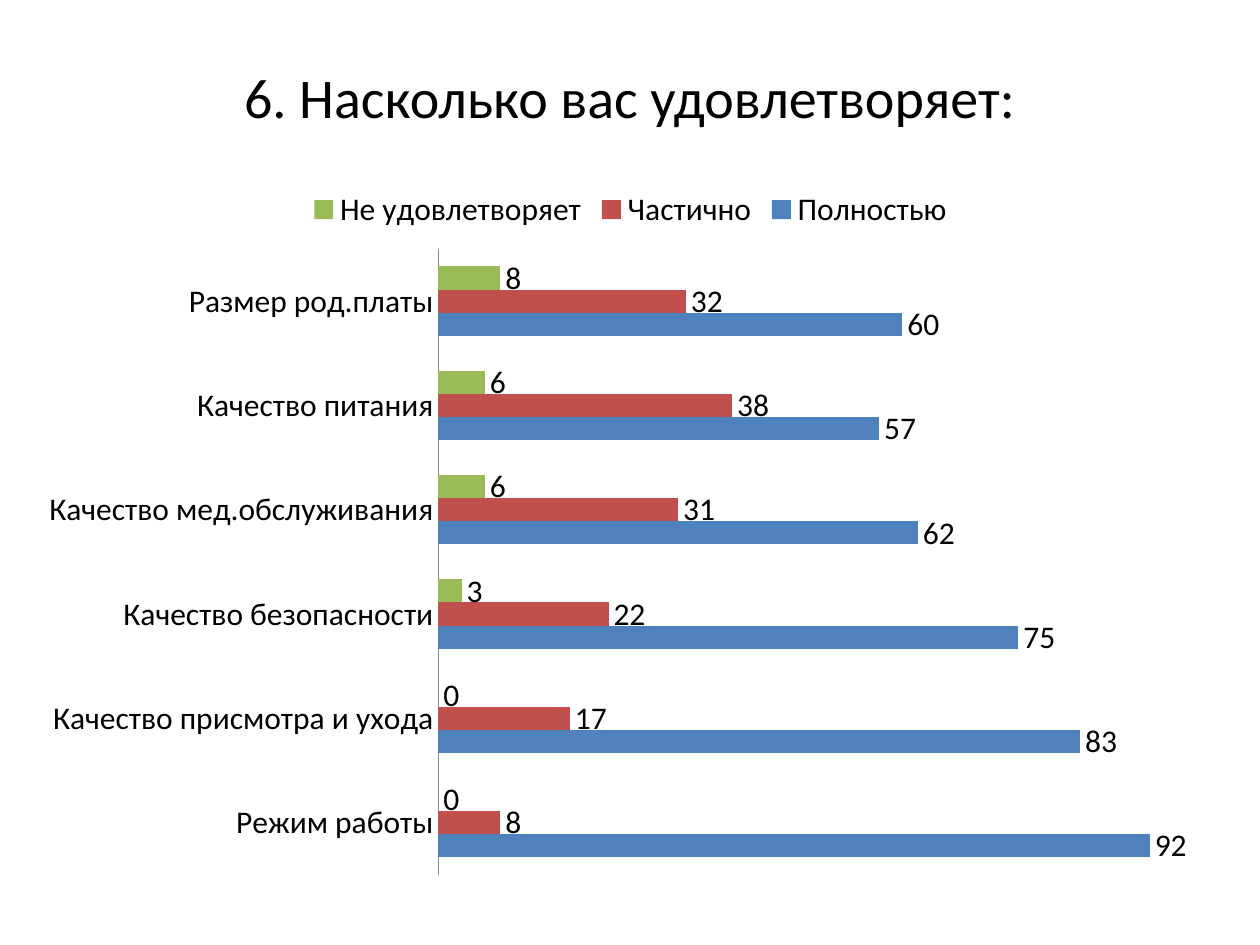
from pptx import Presentation
from pptx.chart.data import CategoryChartData
from pptx.dml.color import RGBColor
from pptx.enum.chart import XL_CHART_TYPE, XL_LABEL_POSITION, XL_LEGEND_POSITION, XL_TICK_MARK
from pptx.enum.text import MSO_ANCHOR, PP_ALIGN
from pptx.util import Inches, Pt

BLACK = RGBColor(0x00, 0x00, 0x00)
GRAY = RGBColor(0x86, 0x86, 0x86)
BLUE = RGBColor(0x4F, 0x81, 0xBD)
RED = RGBColor(0xC0, 0x50, 0x4D)
GREEN = RGBColor(0x9B, 0xBB, 0x59)
FONT = "Calibri"


def scale(*sizes):
    return [round(size * Inches(1) / 126) for size in sizes]


def style(font, size):
    font.name = FONT
    font.size = Pt(size)
    font.bold = False
    font.color.rgb = BLACK


deck = Presentation()
deck.slide_width, deck.slide_height = scale(1260, 945)
slide = deck.slides.add_slide(deck.slide_layouts[5])

title = slide.shapes.title
title.left, title.top, title.width, title.height = scale(63, 38, 1134, 117)
frame = title.text_frame
frame.text = "6. Насколько вас удовлетворяет:"
frame.vertical_anchor = MSO_ANCHOR.MIDDLE
head = frame.paragraphs[0]
head.alignment = PP_ALIGN.CENTER
style(head.runs[0].font, 32)

data = CategoryChartData()
data.categories = [
    "Режим работы",
    "Качество присмотра и ухода",
    "Качество безопасности",
    "Качество мед.обслуживания",
    "Качество питания",
    "Размер род.платы",
]
answers = [
    ("Полностью", BLUE, (92, 83, 75, 62, 57, 60)),
    ("Частично", RED, (8, 17, 22, 31, 38, 32)),
    ("Не удовлетворяет", GREEN, (0, 0, 3, 6, 6, 8)),
]
for name, color, values in answers:
    data.add_series(name, values)

chart = slide.shapes.add_chart(
    XL_CHART_TYPE.BAR_CLUSTERED, *scale(25, 175, 1211, 714), data
).chart
style(chart.font, 18)
chart.has_title = False
chart.has_legend = True
chart.legend.position = XL_LEGEND_POSITION.TOP
chart.legend.include_in_layout = False

topics = chart.category_axis
topics.major_tick_mark = XL_TICK_MARK.NONE
topics.minor_tick_mark = XL_TICK_MARK.NONE
topics.has_major_gridlines = False
topics.format.line.color.rgb = GRAY
topics.format.line.width = Pt(0.75)

share = chart.value_axis
share.visible = False
share.has_major_gridlines = False
share.minimum_scale = 0
share.maximum_scale = 100

plot = chart.plots[0]
plot.gap_width = 150
plot.overlap = 0
plot.vary_by_categories = False
for series, (name, color, values) in zip(plot.series, answers):
    series.format.fill.solid()
    series.format.fill.fore_color.rgb = color
    series.invert_if_negative = False
    labels = series.data_labels
    labels.show_value = True
    labels.position = XL_LABEL_POSITION.OUTSIDE_END
    style(labels.font, 18)

deck.save("out.pptx")
